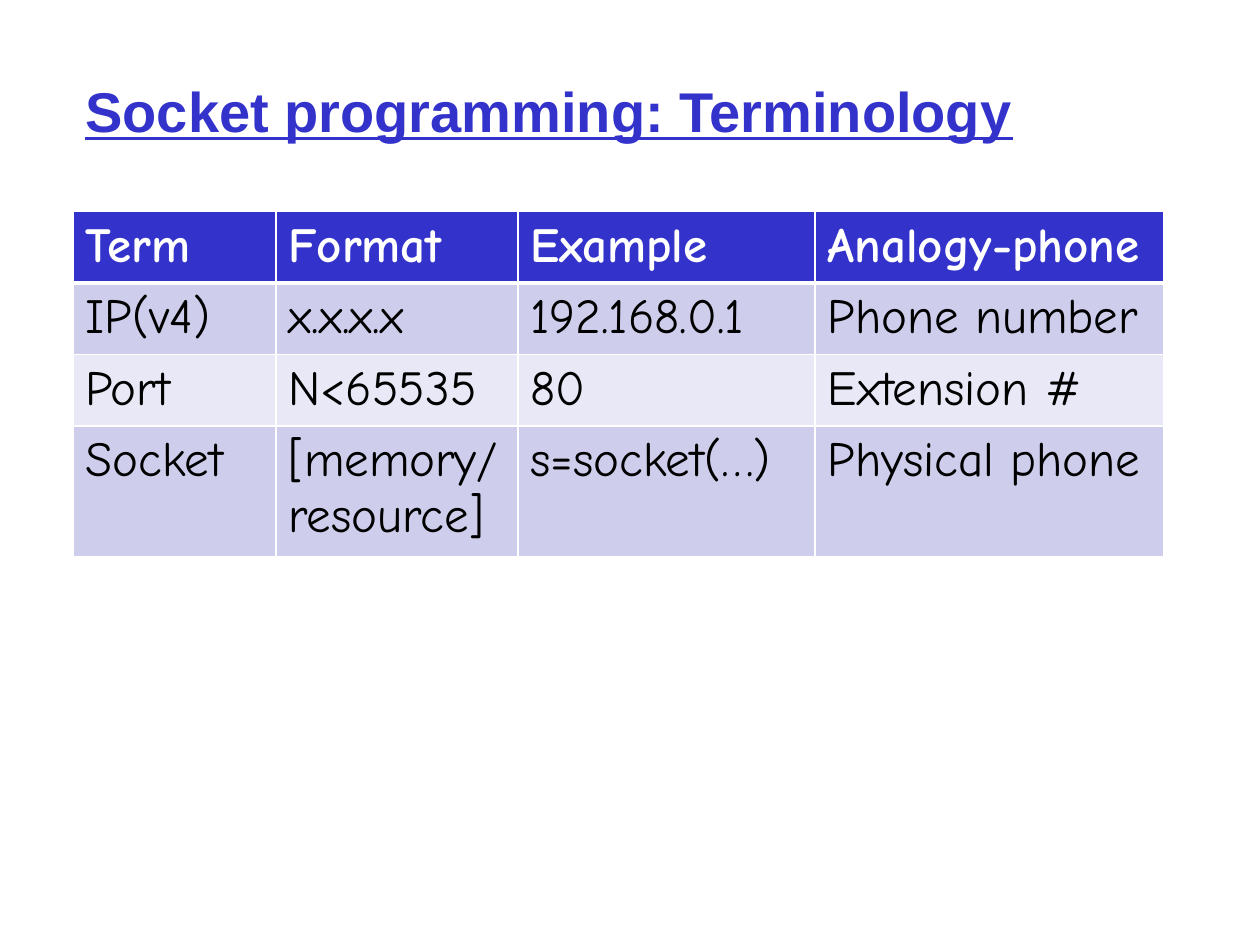
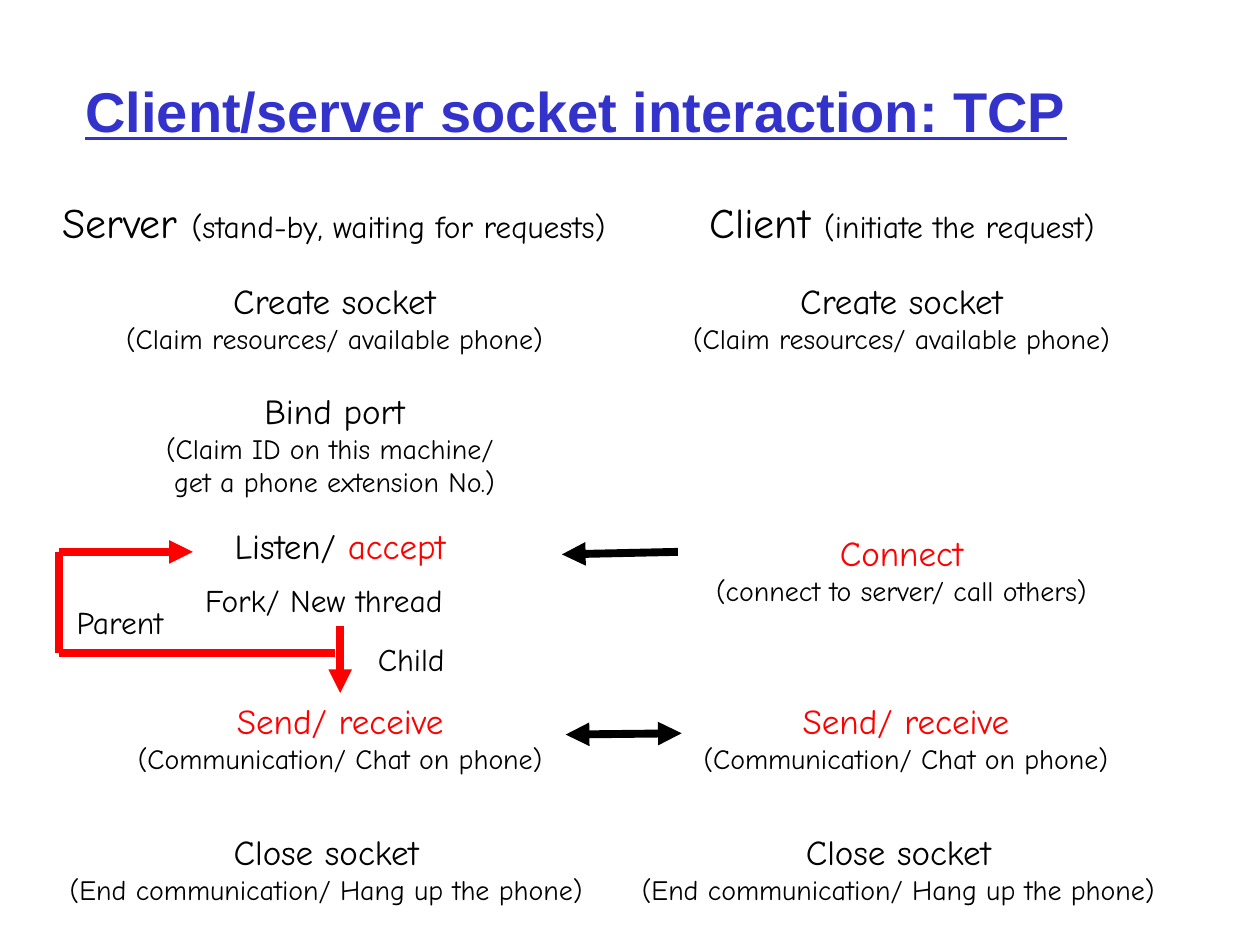
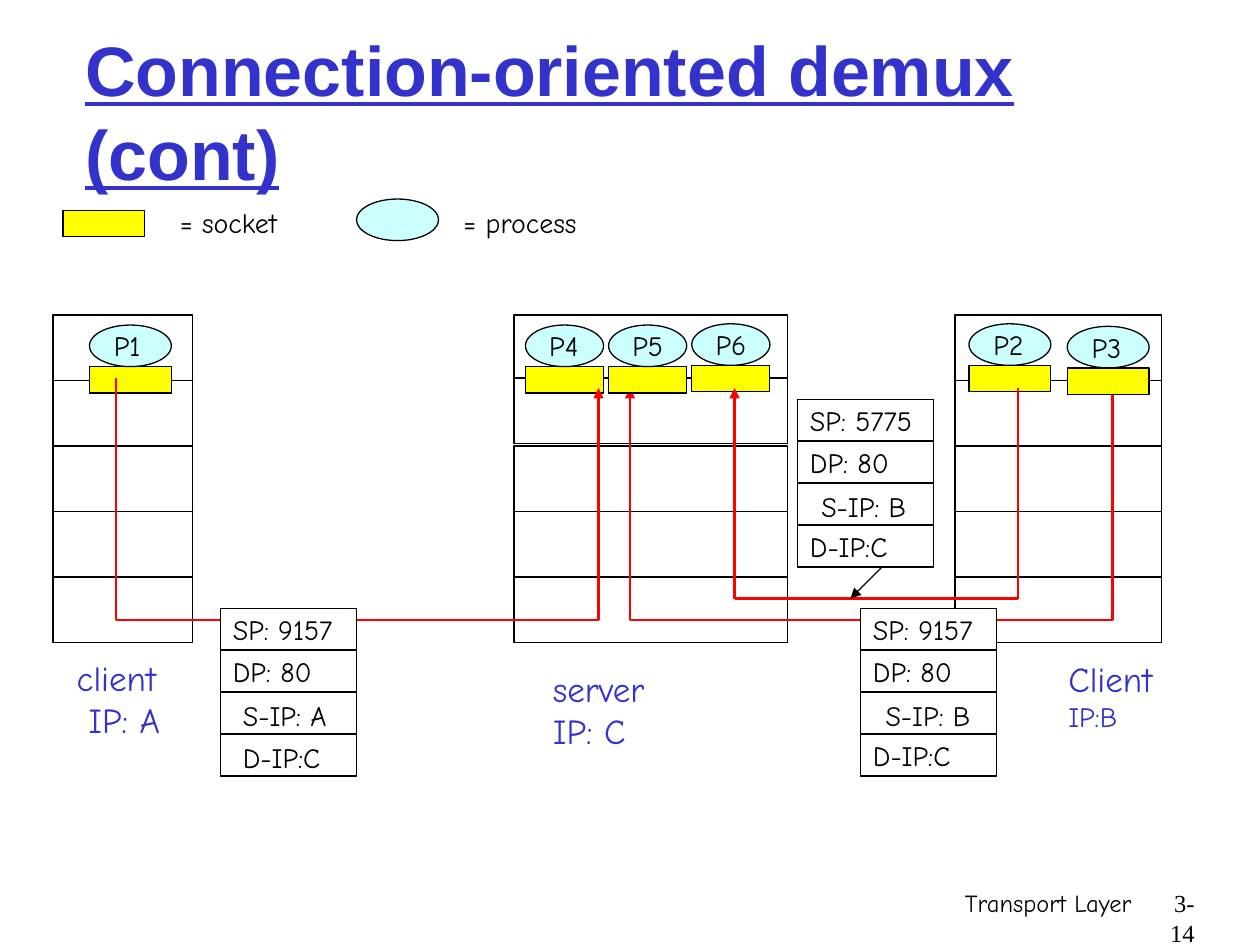
from itertools import pairwise

from lxml import etree
from pptx import Presentation
from pptx import util as u
from pptx.dml import color as dml_color
from pptx.enum import shapes, text
from pptx.oxml import ns

BLUE, RED, BLACK, WHITE = "3333CC", "FF0000", "000000", "FFFFFF"
YELLOW, CYAN = "FFFF00", "CCFFFF"
BAND_DARK, BAND_LIGHT = "CECEEC", "E8E8F6"
BODY_FONT, TITLE_FONT, NUMBER_FONT = "Comic Neue", "Arial", "Times New Roman"
LEFT, CENTER, RIGHT = text.PP_ALIGN.LEFT, text.PP_ALIGN.CENTER, text.PP_ALIGN.RIGHT
TOP, MIDDLE = text.MSO_ANCHOR.TOP, text.MSO_ANCHOR.MIDDLE
RECTANGLE, OVAL = shapes.MSO_SHAPE.RECTANGLE, shapes.MSO_SHAPE.OVAL
TITLE_BOX = (0.58, 0.25, 8.5, 1.25)


def rgb(value):
    return dml_color.RGBColor.from_string(value)


def inches(*values):
    return [u.Inches(value) for value in values]


def child(parent, tag, **attributes):
    return etree.SubElement(parent, ns.qn(tag), **attributes)


def style(run, size, color, font=BODY_FONT, bold=False, underline=False):
    run.font.size = u.Pt(size)
    run.font.name = font
    run.font.color.rgb = rgb(color)
    run.font.bold = bold
    run.font.underline = underline


def write(frame, lines, align=LEFT, anchor=TOP, wrap=False, **look):
    frame.word_wrap = wrap
    frame.vertical_anchor = anchor
    for index, runs in enumerate(lines):
        paragraph = frame.paragraphs[0] if index == 0 else frame.add_paragraph()
        paragraph.alignment = align
        for content, size, color in runs:
            run = paragraph.add_run()
            run.text = content
            style(run, size, color, **look)


def add_text(slide, box, lines, **options):
    write(slide.shapes.add_textbox(*inches(*box)).text_frame, lines, **options)


def add_box(slide, kind, box, fill, label=None):
    shape = slide.shapes.add_shape(kind, *inches(*box))
    shape.shadow.inherit = False
    shape.fill.solid()
    shape.fill.fore_color.rgb = rgb(fill)
    shape.line.color.rgb = rgb(BLACK)
    shape.line.width = u.Pt(0.75)
    if label:
        write(shape.text_frame, [[(label, 16, BLACK)]], anchor=MIDDLE)


def add_line(slide, start, end, color, width, head=False, tail=False):
    connector = slide.shapes.add_connector(
        shapes.MSO_CONNECTOR.STRAIGHT, *inches(*start, *end))
    connector.line.color.rgb = rgb(color)
    connector.line.width = u.Pt(width)
    line = connector.line._get_or_add_ln()
    if head:
        child(line, "a:headEnd", type="triangle")
    if tail:
        child(line, "a:tailEnd", type="triangle")
    child(connector._element.spPr, "a:effectLst")


def add_route(slide, points, color, width, arrow=True):
    legs = list(pairwise(points))
    for index, (start, end) in enumerate(legs, 1):
        add_line(slide, start, end, color, width, tail=arrow and index == len(legs))


def add_titled_slide(presentation, title, size=32):
    slide = presentation.slides.add_slide(presentation.slide_layouts[6])
    add_text(slide, TITLE_BOX, [[(title, size, BLUE)]], anchor=MIDDLE, wrap=True,
             font=TITLE_FONT, bold=True, underline=True)
    return slide


def add_footer(slide, box, section, number):
    left, top, width, height = box
    add_text(slide, (left, top, width - 0.5, height), [[(section, 14, BLACK)]],
             align=RIGHT, wrap=True)
    add_text(slide, (left + width - 0.5, top, 0.5, height), [[(number, 14, BLACK)]],
             align=RIGHT, wrap=True, font=NUMBER_FONT)


def format_cell(cell, row, content):
    cell.text_frame.text = content
    for paragraph in cell.text_frame.paragraphs:
        for run in paragraph.runs:
            style(run, 28, BLACK if row else WHITE, bold=row == 0)
    widths = {"a:lnL": 1, "a:lnR": 1, "a:lnT": 3 if row == 1 else 1,
              "a:lnB": 3 if row == 0 else 1}
    properties = cell._tc.get_or_add_tcPr()
    for tag, width in widths.items():
        border = child(properties, tag, w=str(u.Pt(width)))
        child(child(border, "a:solidFill"), "a:srgbClr", val=WHITE)
    cell.fill.solid()
    band = BAND_DARK if row % 2 else BAND_LIGHT
    cell.fill.fore_color.rgb = rgb(band if row else BLUE)


def add_term_table(slide, box, column_widths, rows):
    frame = slide.shapes.add_table(len(rows), len(column_widths), *inches(*box))
    for column, width in zip(frame.table.columns, column_widths):
        column.width = u.Inches(width)
    for row, contents in enumerate(rows):
        for column, content in enumerate(contents):
            format_cell(frame.table.cell(row, column), row, content)


def build_terminology(presentation):
    slide = add_titled_slide(presentation, "Socket programming: Terminology")
    add_term_table(slide, (0.58, 1.68, 8.66, 1.64), (1.61, 1.92, 2.36, 2.77), [
        ("Term", "Format", "Example", "Analogy-phone"),
        ("IP(v4)", "x.x.x.x", "192.168.0.1", "Phone number"),
        ("Port", "N<65535", "80", "Extension #"),
        ("Socket", "[memory/\nresource]", "s=socket(…)", "Physical phone"),
    ])


def add_heading(slide, box, name, role):
    add_text(slide, box, [[(name, 24, BLACK), (role, 18, BLACK)]],
             align=CENTER, anchor=MIDDLE)


def add_step(slide, left, top, width, action, *details):
    lines = [action] + [[(detail, 16, BLACK)] for detail in details]
    height = 0.44 + 0.27 * len(details)
    add_text(slide, (left, top, width, height), lines, align=CENTER)


def add_shared_steps(slide, create_left, chat_left, close_left):
    add_step(slide, create_left, 2.17, 3.77, [("Create socket", 20, BLACK)],
             "(Claim resources/ available phone)")
    add_step(slide, chat_left, 5.5, 3.52, [("Send/ receive", 20, RED)],
             "(Communication/ Chat on phone)")
    add_step(slide, close_left, 6.54, 4.56, [("Close socket", 20, BLACK)],
             "(End communication/ Hang up the phone)")


def add_fork(slide, box):
    left, top, width, height = box
    branch = top + height
    add_line(slide, (left + width, branch - 0.21), (left + width, branch + 0.32),
             RED, 4.5, tail=True)
    add_route(slide, [(left + width - 0.04, branch), (left, branch),
                      (left, top), (left + 1.06, top)], RED, 4.5)
    labels = [("Fork/ New thread", 1.06, 0.18, 2.34), ("Child", 2.43, 0.65, 2.34),
              ("Parent", 0.04, 0.36, 1.17)]
    for label, across, down, label_width in labels:
        add_text(slide, (left + across, top + down, label_width, 0.4),
                 [[(label, 18, BLACK)]], wrap=True)


def build_interaction(presentation):
    slide = add_titled_slide(presentation, "Client/server socket interaction: TCP")
    add_heading(slide, (0.08, 1.51, 5.14, 0.5), "Server ",
                "(stand-by, waiting for requests)")
    add_heading(slide, (5.31, 1.51, 3.78, 0.5), "Client ", "(initiate the request) ")
    add_shared_steps(slide, 0.77, 0.94, 0.31)
    add_shared_steps(slide, 5.27, 5.43, 4.85)
    add_step(slide, 1.13, 3.04, 3.05, [("Bind port", 20, BLACK)],
             "(Claim ID on this machine/ ", "get a phone extension No.)")
    add_step(slide, 1.65, 4.11, 2.1, [("Listen/ ", 20, BLACK), ("accept", 20, RED)])
    add_step(slide, 5.4, 4.17, 3.51, [("Connect", 20, RED)],
             "(connect to server/ call others)")
    add_fork(slide, (0.47, 4.38, 2.23, 0.8))
    add_line(slide, (5.38, 4.38), (4.46, 4.4), BLACK, 4.5, tail=True)
    add_line(slide, (5.41, 5.82), (4.49, 5.83), BLACK, 4.5, head=True, tail=True)


def add_host(slide, left, top, width, second_layer=0.52):
    for offset in (0, second_layer, 1.04, 1.56, 2.08):
        add_box(slide, RECTANGLE, (left, top + offset, width, 0.52), WHITE)


def add_process(slide, left, top, width, name):
    add_box(slide, RECTANGLE, (left, top + 0.33, width, 0.21), YELLOW)
    add_box(slide, OVAL, (left, top, width, 0.33), CYAN, name)


def add_packet(slide, left, top, fields):
    for index, (field, shift) in enumerate(fields):
        row_top = top + index / 3
        add_box(slide, RECTANGLE, (left, row_top, 1.08, 0.33), WHITE,
                None if shift else field)
        if shift:
            add_text(slide, (left + shift, row_top, 0.96, 0.37), [[(field, 16, BLACK)]])


def add_legend(slide, left, top):
    add_box(slide, RECTANGLE, (left, top + 0.09, 0.65, 0.21), YELLOW)
    add_box(slide, OVAL, (left + 2.33, top, 0.65, 0.33), CYAN)
    for label, across, width in (("= socket", 0.83, 1.07), ("= process", 3.08, 1.18)):
        add_text(slide, (left + across, top, width, 0.37), [[(label, 16, BLACK)]])


def build_demux(presentation):
    slide = add_titled_slide(presentation, "Connection-oriented demux (cont)", 40)
    add_footer(slide, (5.92, 7, 3.66, 0.5), "Transport Layer", "3-14")
    add_legend(slide, 0.5, 1.58)

    add_host(slide, 0.42, 2.5, 1.11)
    add_host(slide, 7.58, 2.5, 1.64)
    add_host(slide, 4.08, 2.5, 2.17, second_layer=0.5)
    host_labels = [((0.51, 5.16, 0.95, 0.77), "client", " IP: A", 20),
                   ((4.29, 5.25, 1.04, 0.77), "server", "IP: C", 20),
                   ((8.38, 5.17, 0.95, 0.7), "Client", "IP:B", 16)]
    for box, name, address, size in host_labels:
        add_text(slide, box, [[(name, 20, BLUE)], [(address, size, BLUE)]])

    add_route(slide, [(8.83, 3), (8.83, 4.92), (5, 4.92), (5, 3.08)], RED, 1.5)
    processes = [(0.71, 2.58, 0.65, "P1"), (7.69, 2.57, 0.65, "P2"),
                 (8.47, 2.59, 0.65, "P3"), (4.17, 2.58, 0.62, "P4"),
                 (4.83, 2.58, 0.62, "P5"), (5.49, 2.57, 0.62, "P6")]
    for process in processes:
        add_process(slide, *process)
    add_route(slide, [(0.92, 3), (0.92, 4.92), (4.75, 4.92), (4.75, 3.08)], RED, 1.5)
    add_route(slide, [(8.08, 3.08), (8.08, 4.75), (5.83, 4.75), (5.83, 3.08)], RED, 1.5)

    packets = [(1.75, 4.83, "9157", "A", 0.08, 0.08), (6.83, 4.83, "9157", "B", 0.1, 0),
               (6.33, 3.17, "5775", "B", 0.09, 0)]
    for left, top, port, source, source_shift, target_shift in packets:
        add_packet(slide, left, top, [
            (f"SP: {port}", 0), ("DP: 80", 0),
            (f"S-IP: {source}", source_shift), ("D-IP:C", target_shift)])
    add_line(slide, (7, 4.5), (6.75, 4.75), BLACK, 0.75, tail=True)


def main():
    presentation = Presentation()
    presentation.slide_width, presentation.slide_height = inches(10, 7.5)
    build_terminology(presentation)
    build_interaction(presentation)
    build_demux(presentation)
    presentation.save("out.pptx")


if __name__ == "__main__":
    main()
